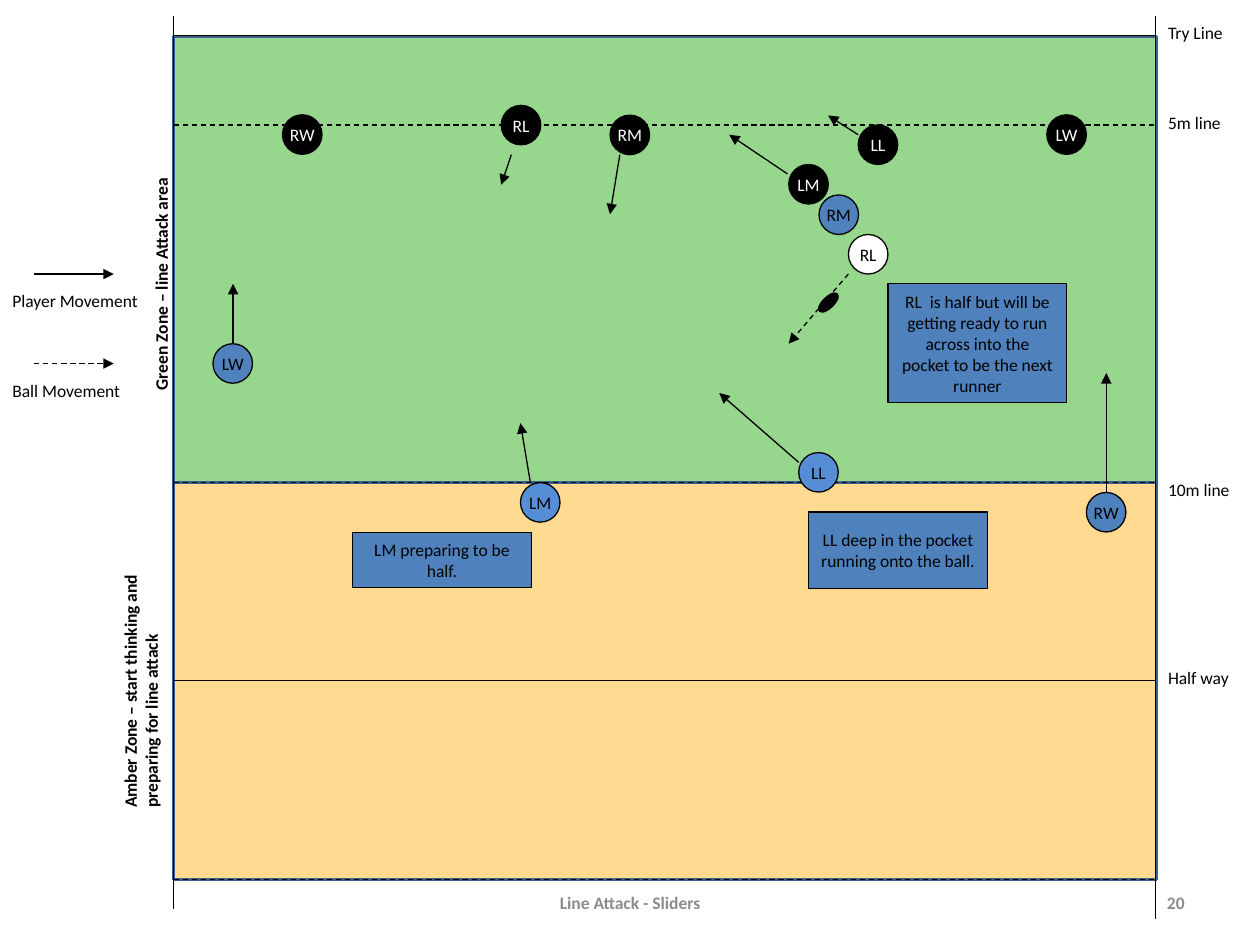
from lxml import etree
from pptx import Presentation
from pptx.dml.color import RGBColor
from pptx.enum.dml import MSO_LINE
from pptx.enum.shapes import MSO_CONNECTOR, MSO_SHAPE
from pptx.enum.text import MSO_ANCHOR, PP_ALIGN
from pptx.oxml.ns import qn
from pptx.util import Pt

RECTANGLE, OVAL = MSO_SHAPE.RECTANGLE, MSO_SHAPE.OVAL
STRAIGHT, DASH = MSO_CONNECTOR.STRAIGHT, MSO_LINE.DASH
LEFT, CENTER, RIGHT = PP_ALIGN.LEFT, PP_ALIGN.CENTER, PP_ALIGN.RIGHT
TOP, MIDDLE = MSO_ANCHOR.TOP, MSO_ANCHOR.MIDDLE

BLACK = RGBColor(0x00, 0x00, 0x00)
WHITE = RGBColor(0xFF, 0xFF, 0xFF)
GRAY = RGBColor(0x8C, 0x8C, 0x8C)
BLUE = RGBColor(0x4F, 0x81, 0xBD)
LIGHT_BLUE = RGBColor(0x55, 0x8E, 0xD5)
NAVY = RGBColor(0x3A, 0x5F, 0x8C)
GREEN = RGBColor(0x74, 0xC8, 0x66)
AMBER = RGBColor(0xFF, 0xCC, 0x66)

PITCH_LEFT, PITCH_RIGHT = 99.2, 660.4
TRY_LINE, FIVE_METRES, TEN_METRES, HALF_WAY, PITCH_END = 20.4, 71.4, 275.8, 389, 502.6
PLAYER_SIZE = 22.6
LABEL_HEIGHT = 19.4

# label, left, top, fill
PLAYERS = [
    ("LW", 121.7, 196.4, BLUE), ("LM", 297.4, 275.8, LIGHT_BLUE),
    ("RM", 468, 111.4, BLUE), ("LL", 456.4, 258.6, LIGHT_BLUE),
    ("RL", 484.8, 134, WHITE), ("RW", 620.8, 281.4, BLUE),
    ("LW", 598.2, 65.6, BLACK), ("LL", 490.4, 71.4, BLACK),
    ("LM", 450.7, 94, BLACK), ("RM", 348.6, 65.8, BLACK),
    ("RL", 286.4, 60.2, BLACK), ("RW", 161.4, 65.6, BLACK),
]
# start x, start y, end x, end y
RUNS = [
    (456.4, 264.2, 411, 224.6), (303.1, 275.8, 297.4, 241.8),
    (632.2, 281.4, 632.2, 213.2), (292.2, 88.4, 286.4, 105.6),
    (133.2, 196.4, 133.2, 162.2), (490.4, 77, 473.2, 66),
    (450, 99.4, 416.7, 77), (354.2, 88.4, 348.6, 122.4),
]
# text, left, top, width, height
NOTES = [
    ("LL deep in the pocket running onto the ball.", 462, 292.6, 102.2, 43.9),
    ("RL  is half but will be getting ready to run across into the pocket "
     "to be the next runner", 507.4, 162.2, 102.2, 67.8),
    ("LM preparing to be half.", 201.4, 304.2, 102.2, 31.7),
]
# text, top, width
LINE_LABELS = [
    ("Try Line", 9.2, 51.1), ("5m line", 60.4, 46.8),
    ("10m line", 270.2, 52.6), ("Half way", 377.8, 53.3),
]


def write(shape, text, align=LEFT, color=BLACK, bold=False, anchor=MIDDLE, wrap=True):
    frame = shape.text_frame
    frame.text = text
    frame.word_wrap = wrap
    frame.vertical_anchor = anchor
    para = frame.paragraphs[0]
    para.alignment = align
    para.font.name, para.font.size = "Calibri", Pt(10)
    para.font.bold = bold
    para.font.color.rgb = color


def add_label(page, text, left, top, width, height=LABEL_HEIGHT, rotation=0, **style):
    box = page.shapes.add_textbox(Pt(left), Pt(top), Pt(width), Pt(height))
    box.rotation = rotation
    write(box, text, **style)


def add_filled(page, kind, left, top, width, height, fill, line=BLACK, weight=0.75):
    shape = page.shapes.add_shape(kind, Pt(left), Pt(top), Pt(width), Pt(height))
    shape.shadow.inherit = False
    shape.fill.solid()
    shape.fill.fore_color.rgb = fill
    shape.line.color.rgb = line
    shape.line.width = Pt(weight)
    return shape


def add_zone(page, top, bottom, color, opacity):
    """Add a see-through band of the pitch; opacity is a percentage."""
    zone = add_filled(page, RECTANGLE, PITCH_LEFT, top, PITCH_RIGHT - PITCH_LEFT + 0.6,
                      bottom - top, color, NAVY, 2)
    fill_color = zone.fill._xPr.find(qn("a:solidFill"))[0]
    etree.SubElement(fill_color, qn("a:alpha"), val=str(opacity * 1000))


def add_line(page, x1, y1, x2, y2, dashed=False, arrow=False):
    connector = page.shapes.add_connector(STRAIGHT, Pt(x1), Pt(y1), Pt(x2), Pt(y2))
    connector.line.color.rgb = BLACK
    connector.line.width = Pt(0.75)
    if dashed:
        connector.line.dash_style = DASH
    if arrow:
        etree.SubElement(connector.line._get_or_add_ln(), qn("a:tailEnd"), type="triangle")
    etree.SubElement(connector._element.spPr, qn("a:effectLst"))


def add_player(page, label, left, top, fill):
    player = add_filled(page, OVAL, left, top, PLAYER_SIZE, PLAYER_SIZE, fill)
    write(player, label, CENTER, WHITE if fill == BLACK else BLACK, wrap=False)


def add_note(page, text, left, top, width, height):
    write(add_filled(page, RECTANGLE, left, top, width, height, BLUE), text, CENTER)


def add_pitch(page):
    add_zone(page, TEN_METRES, PITCH_END, AMBER, 72)
    add_zone(page, TRY_LINE + 0.4, TEN_METRES, GREEN, 74)
    add_line(page, PITCH_LEFT, 9.2, PITCH_LEFT, 519.6)
    add_line(page, PITCH_RIGHT, 9.2, PITCH_RIGHT, 525.2)
    for y in (TRY_LINE, HALF_WAY):
        add_line(page, PITCH_LEFT, y, PITCH_RIGHT, y)
    for y in (FIVE_METRES, TEN_METRES, PITCH_END):
        add_line(page, PITCH_LEFT, y, PITCH_RIGHT, y, dashed=True)


def add_legend(page):
    for text, y, width, dashed in (("Player Movement", 156.6, 92.2, False),
                                   ("Ball Movement", 207.8, 80.6, True)):
        add_line(page, 19.6, y, 65, y, dashed, arrow=True)
        add_label(page, text, 0, y + 5.8, width, anchor=TOP, wrap=False)


def add_ball(page):
    add_line(page, 484.8, 156.6, 450.7, 196.4, dashed=True, arrow=True)
    ball = add_filled(page, OVAL, 470.9, 166.4, 5, 13, BLACK, weight=2)
    ball.rotation = 46


def main():
    deck = Presentation()
    deck.slide_width, deck.slide_height = Pt(720), Pt(540)
    page = deck.slides.add_slide(deck.slide_layouts[6])

    add_pitch(page)
    for player in PLAYERS:
        add_player(page, *player)
    for run in RUNS:
        add_line(page, *run, arrow=True)
    add_ball(page)
    for note in NOTES:
        add_note(page, *note)

    add_legend(page)
    for text, top, width in LINE_LABELS:
        add_label(page, text, PITCH_RIGHT, top, width, anchor=TOP, wrap=False)
    add_label(page, "Green Zone – line Attack area", 7.2, 135.4, 169.9,
              rotation=270, bold=True, anchor=TOP)
    add_label(page, "Amber Zone – start thinking and preparing for line attack",
              -13, 359.3, 187.2, 31.7, rotation=270, bold=True, anchor=TOP)
    add_label(page, "Line Attack - Sliders", 246, 502.6, 228, 26.6,
              align=CENTER, color=GRAY, bold=True)
    add_label(page, "20", 516, 502.6, 168, 26.6, align=RIGHT, color=GRAY, bold=True)

    deck.save("out.pptx")


if __name__ == "__main__":
    main()
